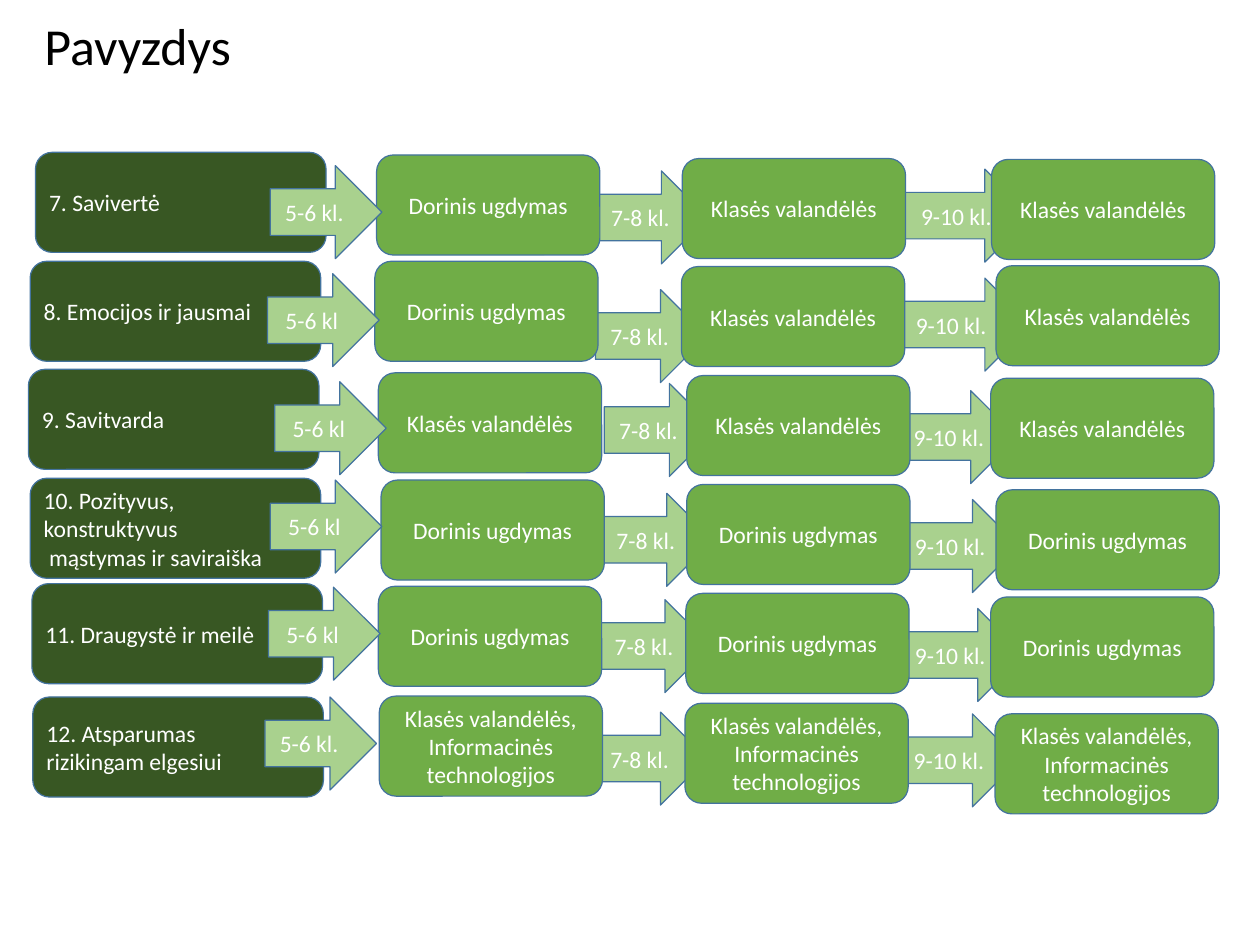
import pptx
import pptx.util
import pptx.dml.color
import pptx.enum.shapes
import pptx.enum.text
from dataclasses import dataclass

TITLE = "Pavyzdys"
ETHICS = "Dorinis ugdymas"
CLASS_HOUR = "Klasės valandėlės"
CLASS_HOUR_IT = "Klasės valandėlės, Informacinės technologijos"
MIDDLE_GRADES, UPPER_GRADES = "7-8 kl.", "9-10 kl."

ROWS = [
    ("7. Savivertė", "5-6 kl.", (ETHICS, CLASS_HOUR, CLASS_HOUR)),
    ("8. Emocijos ir jausmai", "5-6 kl", (ETHICS, CLASS_HOUR, CLASS_HOUR)),
    ("9. Savitvarda", "5-6 kl", (CLASS_HOUR, CLASS_HOUR, CLASS_HOUR)),
    ("10. Pozityvus, konstruktyvus\nmąstymas ir saviraiška", "5-6 kl", (ETHICS, ETHICS, ETHICS)),
    ("11. Draugystė ir meilė", "5-6 kl", (ETHICS, ETHICS, ETHICS)),
    ("12. Atsparumas\nrizikingam elgesiui", "5-6 kl.", (CLASS_HOUR_IT,) * 3),
]
INDENTED_LINE = "mąstymas ir saviraiška"

SLIDE_WIDTH, SLIDE_HEIGHT = 14.22, 10.67
FIRST_ROW_TOP, ROW_PITCH = 1.72, 1.23
TOPIC_LEFT = 0.36
SUBJECT_LEFTS = (4.27, 7.73, 11.21)
ARROW_LEFTS = (3.04, 6.76, 10.17)
TOPIC_SIZE = (3.28, 1.13)
SUBJECT_SIZE = (2.52, 1.13)
ARROW_WIDTH, ARROW_HEIGHT = 1.26, 1.05
UPPER_ARROW_WIDTHS = (1.43, 1.55, 1.28, 1.29, 1.41, 1.32)

TOPIC_SHIFTS = [(0.04, 0), (-0.02, 0), (-0.04, -0.01), (-0.02, -0.01), (0, -0.05), (0.01, 0)]
SUBJECT_SHIFTS = [
    ((-0.02, 0.03), (-0.03, 0.07), (-0.02, 0.08)),
    ((-0.04, 0), (-0.04, 0.06), (0.03, 0.05)),
    ((0, 0.03), (0.02, 0.06), (-0.03, 0.09)),
    ((0.03, 0.01), (0.02, 0.06), (0.03, 0.12)),
    ((0, -0.02), (0.01, 0.06), (-0.03, 0.1)),
    ((0.01, -0.01), (0, 0.07), (0.02, 0.19)),
]
ARROW_SHIFTS = [
    ((0.01, 0.15), (-0.03, 0.21), (0.04, 0.19)),
    ((-0.02, 0.14), (-0.04, 0.32), (-0.08, 0.19)),
    ((0.06, 0.13), (0.06, 0.15), (0.03, 0.23)),
    ((0.01, 0.01), (0.03, 0.16), (0.04, 0.23)),
    ((-0.01, -0.01), (0.01, 0.13), (-0.02, 0.23)),
    ((-0.05, 0), (-0.04, 0.17), (0.01, 0.19)),
]


@dataclass(frozen=True)
class Theme:
    topic: str = "385723"
    subject: str = "70AD47"
    arrow: str = "A9D18E"
    outline: str = "43739E"
    light_text: str = "FFFFFF"
    title_text: str = "000000"
    font: str = "Calibri"
    title_size: float = 42.2
    body_size: float = 19.2
    line_width: float = 1


THEME = Theme()
BOX = pptx.enum.shapes.MSO_SHAPE.FLOWCHART_ALTERNATE_PROCESS
ARROW = pptx.enum.shapes.MSO_SHAPE.RIGHT_ARROW
LEFT = pptx.enum.text.PP_ALIGN.LEFT
CENTER = pptx.enum.text.PP_ALIGN.CENTER


def color(value):
    return pptx.dml.color.RGBColor.from_string(value)


def write_text(shape, text, size, text_color, alignment):
    frame = shape.text_frame
    frame.text = text
    frame.word_wrap = True
    frame.vertical_anchor = pptx.enum.text.MSO_ANCHOR.MIDDLE
    for paragraph in frame.paragraphs:
        paragraph.alignment = alignment
        if paragraph.text == INDENTED_LINE:
            paragraph._p.get_or_add_pPr().set("marL", str(pptx.util.Inches(0.06)))
        for run in paragraph.runs:
            run.font.name = THEME.font
            run.font.size = pptx.util.Pt(size)
            run.font.color.rgb = color(text_color)


def add_block(slide, kind, row, left, shift, size, fill, text, alignment=CENTER):
    top = FIRST_ROW_TOP + row * ROW_PITCH
    lengths = (left + shift[0], top + shift[1], *size)
    shape = slide.shapes.add_shape(kind, *map(pptx.util.Inches, lengths))
    shape.shadow.inherit = False
    shape.fill.solid()
    shape.fill.fore_color.rgb = color(fill)
    shape.line.color.rgb = color(THEME.outline)
    shape.line.width = pptx.util.Pt(THEME.line_width)
    write_text(shape, text, THEME.body_size, THEME.light_text, alignment)


def add_arrows(slide, column):
    for row, (_, lower_grades, _) in enumerate(ROWS):
        label = (lower_grades, MIDDLE_GRADES, UPPER_GRADES)[column]
        width = UPPER_ARROW_WIDTHS[row] if column == 2 else ARROW_WIDTH
        add_block(slide, ARROW, row, ARROW_LEFTS[column], ARROW_SHIFTS[row][column],
                  (width, ARROW_HEIGHT), THEME.arrow, label)


def add_title(slide):
    title = slide.shapes.title
    title.left, title.top, title.width, title.height = map(
        pptx.util.Inches, (0.4, 0.33, 2.58, 0.44))
    write_text(title, TITLE, THEME.title_size, THEME.title_text, LEFT)
    title.text_frame.auto_size = pptx.enum.text.MSO_AUTO_SIZE.NONE
    title.text_frame.paragraphs[0].line_spacing = 0.9


def main():
    presentation = pptx.Presentation()
    presentation.slide_width = pptx.util.Inches(SLIDE_WIDTH)
    presentation.slide_height = pptx.util.Inches(SLIDE_HEIGHT)
    slide = presentation.slides.add_slide(presentation.slide_layouts[5])
    add_title(slide)
    add_arrows(slide, 2)
    add_arrows(slide, 1)
    for row, (topic, _, subjects) in enumerate(ROWS):
        add_block(slide, BOX, row, TOPIC_LEFT, TOPIC_SHIFTS[row],
                  TOPIC_SIZE, THEME.topic, topic, LEFT)
        for left, shift, subject in zip(SUBJECT_LEFTS, SUBJECT_SHIFTS[row], subjects):
            add_block(slide, BOX, row, left, shift, SUBJECT_SIZE, THEME.subject, subject)
    add_arrows(slide, 0)
    presentation.save("out.pptx")


if __name__ == "__main__":
    main()
